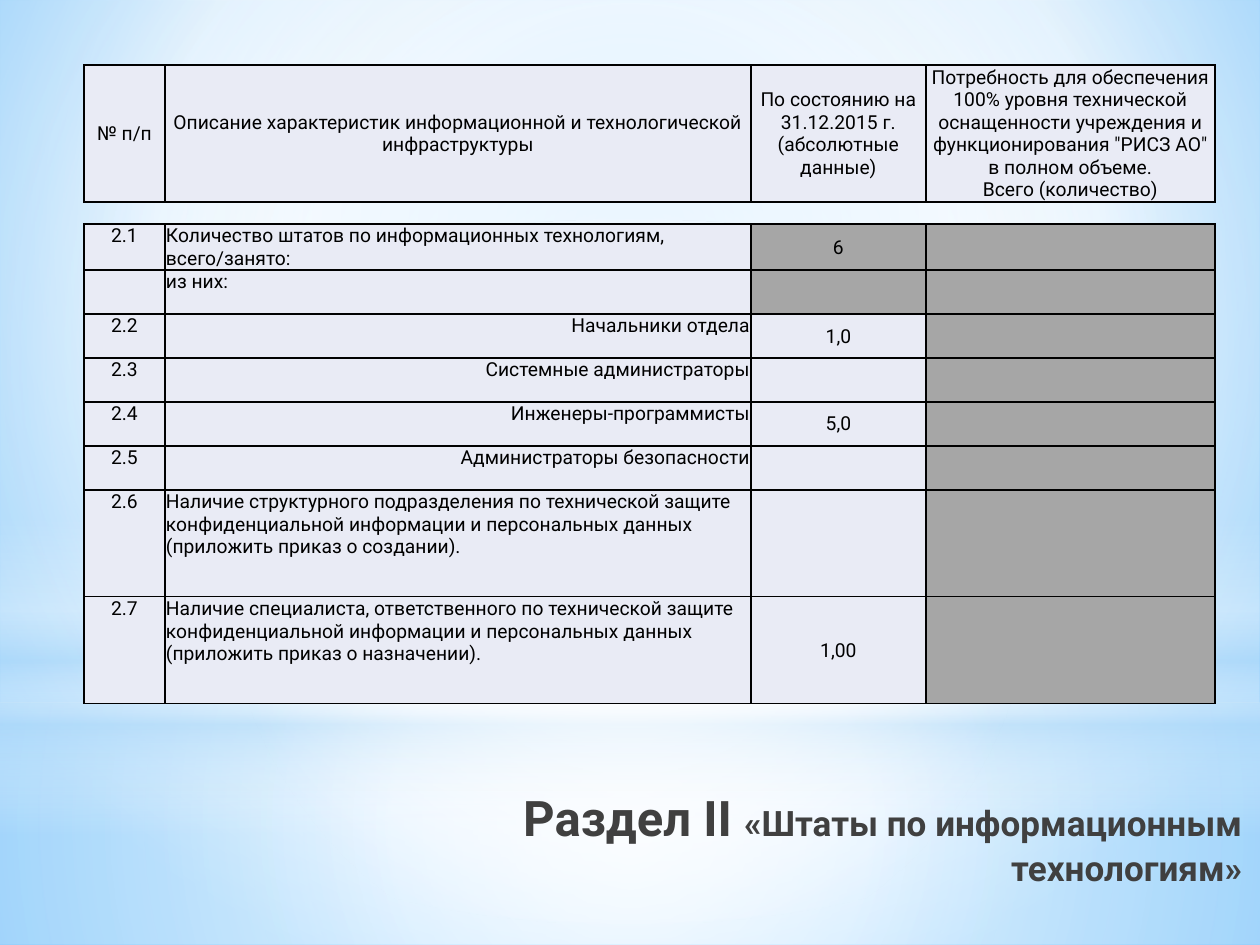
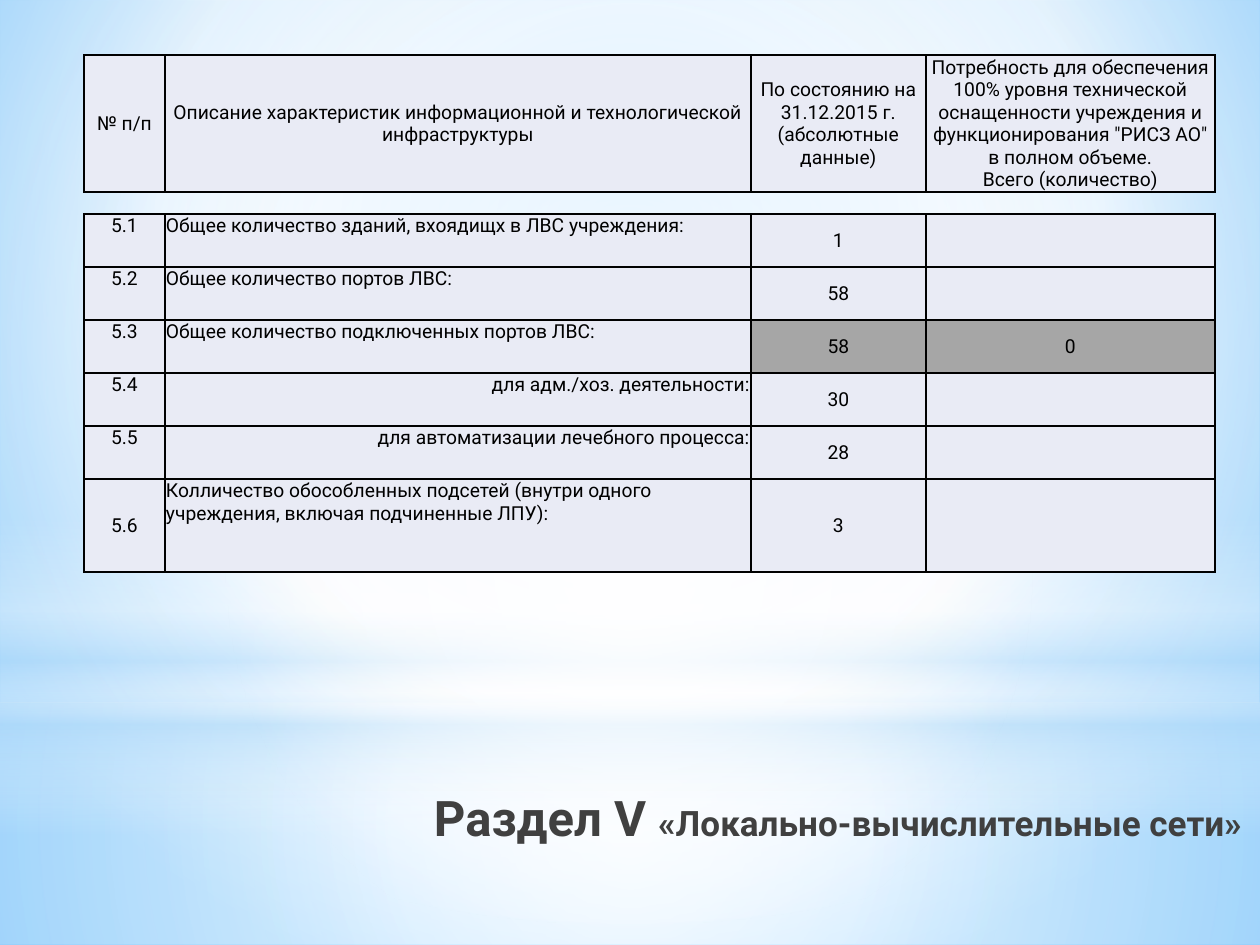
from dataclasses import dataclass

from lxml import etree
from pptx import Presentation
from pptx.dml.color import RGBColor
from pptx.enum.shapes import MSO_SHAPE
from pptx.enum.text import MSO_ANCHOR, MSO_AUTO_SIZE, PP_ALIGN
from pptx.oxml.ns import qn
from pptx.util import Emu, Pt

RECT, OVAL = MSO_SHAPE.RECTANGLE, MSO_SHAPE.OVAL
TOP, MIDDLE = MSO_ANCHOR.TOP, MSO_ANCHOR.MIDDLE
LEFT, CENTER, RIGHT = PP_ALIGN.LEFT, PP_ALIGN.CENTER, PP_ALIGN.RIGHT

EMU_PER_PX = 914400 / 126
SLIDE_W, SLIDE_H = 1260, 945
TITLE_BOX = (358, 781, 897, 157)
TABLE_LEFT = 84
COLUMN_WIDTHS = (81, 586, 175, 289)
HEADER_H = 137
HEADER_TO_BODY = 159

FONT = "Roboto"
CELL_SIZE = 11
BLACK = RGBColor(0x00, 0x00, 0x00)
WHITE = RGBColor(0xFF, 0xFF, 0xFF)
TITLE_GREY = RGBColor(0x40, 0x40, 0x40)
CELL_PALE = RGBColor(0xE9, 0xEB, 0xF5)
CELL_GREY = RGBColor(0xA6, 0xA6, 0xA6)
SKY = RGBColor(0xB4, 0xDC, 0xFA)
SKY_MID = RGBColor(0x9E, 0xD5, 0xFF)
SKY_DEEP = RGBColor(0x5B, 0xB9, 0xFF)

HEADERS = (
    "№ п/п",
    "Описание характеристик информационной и технологической инфраструктуры",
    "По состоянию на 31.12.2015 г. (абсолютные данные)",
    "Потребность для обеспечения 100% уровня технической оснащенности учреждения "
    "и функционирования \"РИСЗ АО\" в полном объеме.\vВсего (количество)",
)


@dataclass(frozen=True)
class Stop:
    position: int
    color: RGBColor
    opacity: int = 100


@dataclass(frozen=True)
class Glow:
    """A gradient shape of the backdrop; without a focus the gradient runs downwards."""
    shape: int
    box: tuple[int, int, int, int]
    stops: tuple[Stop, ...]
    focus: tuple[int, int, int, int] | None = (50, 50, 50, 50)


@dataclass(frozen=True)
class Row:
    number: str
    text: str
    state: str = ""
    need: str = ""
    height: int = 44
    align: int = LEFT
    state_fill: RGBColor = CELL_PALE
    need_fill: RGBColor = CELL_PALE
    number_anchor: int = TOP


@dataclass(frozen=True)
class Section:
    name: str
    topic: str
    top: int
    rows: tuple[Row, ...]


SKY_STOPS = (Stop(0, SKY_MID), Stop(60, WHITE), Stop(100, SKY_DEEP))
SKY_FOCUS = (20, 10, 20, 60)
GLOWS = (
    Glow(RECT, (0, 703, SLIDE_W, 242),
         (Stop(0, WHITE, 91), Stop(37, WHITE, 76), Stop(100, SKY, 79))),
    Glow(RECT, (0, 0, SLIDE_W, 703),
         (Stop(0, WHITE, 89), Stop(48, WHITE, 62), Stop(100, SKY, 79))),
    Glow(RECT, (0, 519, SLIDE_W, 315),
         (Stop(0, WHITE, 0), Stop(29, WHITE, 30), Stop(45, SKY, 40),
          Stop(55, WHITE, 26), Stop(65, SKY, 60), Stop(100, WHITE, 0)), None),
    Glow(OVAL, (0, 220, SLIDE_W, 703), (Stop(0, WHITE), Stop(56, WHITE, 0))),
)

SECTIONS = (
    Section("Раздел II ", "«Штаты по информационным технологиям»", 65, (
        Row("2.1", "Количество штатов по информационных технологиям, всего/занято:",
            "6", height=46, state_fill=CELL_GREY, need_fill=CELL_GREY),
        Row("", "из них:", state_fill=CELL_GREY, need_fill=CELL_GREY),
        Row("2.2", "Начальники отдела", "1,0", align=RIGHT, need_fill=CELL_GREY),
        Row("2.3", "Системные администраторы", align=RIGHT, need_fill=CELL_GREY),
        Row("2.4", "Инженеры-программисты", "5,0", align=RIGHT, need_fill=CELL_GREY),
        Row("2.5", "Администраторы безопасности", align=RIGHT, need_fill=CELL_GREY),
        Row("2.6", "Наличие структурного подразделения по технической защите "
            "конфиденциальной информации и персональных данных "
            "(приложить приказ о создании).", height=107, need_fill=CELL_GREY),
        Row("2.7", "Наличие специалиста, ответственного по технической защите "
            "конфиденциальной информации и персональных данных "
            "(приложить приказ о назначении).", "1,00", height=107, need_fill=CELL_GREY),
    )),
    Section("Раздел V ", "«Локально-вычислительные сети»", 55, (
        Row("5.1", "Общее количество зданий, вхоядищх в ЛВС учреждения:", "1", height=53),
        Row("5.2", "Общее количество портов ЛВС:", "58", height=53),
        Row("5.3", "Общее количество подключенных портов ЛВС:", "58", "0", height=53,
            state_fill=CELL_GREY, need_fill=CELL_GREY),
        Row("5.4", "для адм./хоз. деятельности:", "30", height=53, align=RIGHT),
        Row("5.5", "для автоматизации лечебного процесса:", "28", height=53, align=RIGHT),
        Row("5.6", "Колличество обособленных подсетей (внутри одного учреждения, "
            "включая подчиненные ЛПУ):", "3", height=93, number_anchor=MIDDLE),
    )),
)


def px(value: int) -> Emu:
    return Emu(round(value * EMU_PER_PX))


def set_gradient(element, stops, focus=None) -> None:
    """Replace the plain gradient inside element by one with opacity and focus."""
    old = next(element.iter(qn("a:gradFill")))
    grad = etree.Element(qn("a:gradFill"), rotWithShape="1")
    stop_list = etree.SubElement(grad, qn("a:gsLst"))
    for stop in stops:
        gs = etree.SubElement(stop_list, qn("a:gs"), pos=str(stop.position * 1000))
        color = etree.SubElement(gs, qn("a:srgbClr"), val=str(stop.color))
        if stop.opacity < 100:
            etree.SubElement(color, qn("a:alpha"), val=str(stop.opacity * 1000))
    if focus:
        path = etree.SubElement(grad, qn("a:path"), path="circle")
        sides = {side: str(v * 1000) for side, v in zip("ltrb", focus)}
        etree.SubElement(path, qn("a:fillToRect"), sides)
    else:
        etree.SubElement(grad, qn("a:lin"), ang="5400000", scaled="0")
    old.getparent().replace(old, grad)


def add_backdrop(layout, s) -> None:
    """Give the layout its sky; the glows are drawn on s and moved to the layout."""
    layout.background.fill.gradient()
    set_gradient(layout.background._cSld, SKY_STOPS, SKY_FOCUS)
    for i, glow in enumerate(GLOWS):
        sp = s.shapes.add_shape(glow.shape, *map(px, glow.box))
        sp.shadow.inherit = False
        sp.line.fill.background()
        sp.fill.gradient()
        set_gradient(sp._element, glow.stops, glow.focus)
        sp._element.nvSpPr.cNvPr.set("id", str(100 + i))
        layout.shapes._spTree.insert(2 + i, sp._element)


def add_text(p, text: str, *, size: int, color: RGBColor = BLACK,
             bold: bool = False, align: int = LEFT) -> None:
    p.alignment = align
    for i, line in enumerate(text.split("\v")):
        if i:
            p.add_line_break()
        r = p.add_run()
        r.text = line
        r.font.name, r.font.size, r.font.bold = FONT, Pt(size), bold
        r.font.color.rgb = color


def add_title(s, section: Section) -> None:
    title = s.shapes.title
    title.left, title.top, title.width, title.height = map(px, TITLE_BOX)
    tf = title.text_frame
    tf.word_wrap = True
    tf.auto_size = MSO_AUTO_SIZE.NONE
    tf.vertical_anchor = TOP
    for text, size in ((section.name, 28), (section.topic, 20)):
        add_text(tf.paragraphs[0], text, size=size, color=TITLE_GREY,
                 bold=True, align=RIGHT)


def add_borders(cell) -> None:
    tc_pr = cell._tc.get_or_add_tcPr()
    for side in "LRTB":
        ln = etree.SubElement(tc_pr, qn(f"a:ln{side}"), w=str(Pt(1)))
        fill = etree.SubElement(ln, qn("a:solidFill"))
        etree.SubElement(fill, qn("a:srgbClr"), val=str(BLACK))


def fill_cell(cell, text: str, *, fill: RGBColor = CELL_PALE,
              align: int = CENTER, anchor: int = MIDDLE) -> None:
    cell.margin_left = cell.margin_right = cell.margin_top = px(1)
    cell.margin_bottom = 0
    cell.vertical_anchor = anchor
    add_borders(cell)
    cell.fill.solid()
    cell.fill.fore_color.rgb = fill
    p = cell.text_frame.paragraphs[0]
    if text:
        add_text(p, text, size=CELL_SIZE, align=align)
    else:
        etree.SubElement(p._p, qn("a:endParaRPr"), sz=str(CELL_SIZE * 100))


def add_grid(s, top: int, heights: list[int]):
    """Add an unstyled table with the shared columns."""
    frame = s.shapes.add_table(len(heights), len(COLUMN_WIDTHS), px(TABLE_LEFT), px(top),
                               px(sum(COLUMN_WIDTHS)), px(sum(heights)))
    table = frame.table
    table.first_row = table.horz_banding = False
    for column, width in zip(table.columns, COLUMN_WIDTHS):
        column.width = px(width)
    for row, height in zip(table.rows, heights):
        row.height = px(height)
    return table


def add_section(s, section: Section) -> None:
    add_title(s, section)
    body = add_grid(s, section.top + HEADER_TO_BODY, [row.height for row in section.rows])
    for cells, row in zip(body.rows, section.rows):
        number, text, state, need = cells.cells
        fill_cell(number, row.number, anchor=row.number_anchor)
        fill_cell(text, row.text, align=row.align, anchor=TOP)
        fill_cell(state, row.state, fill=row.state_fill)
        fill_cell(need, row.need, fill=row.need_fill)
    header = add_grid(s, section.top, [HEADER_H])
    for cell, text in zip(header.rows[0].cells, HEADERS):
        fill_cell(cell, text)


def main() -> None:
    prs = Presentation()
    prs.slide_width, prs.slide_height = px(SLIDE_W), px(SLIDE_H)
    layout = prs.slide_layouts.get_by_name("Title Only")
    slides = [prs.slides.add_slide(layout) for _ in SECTIONS]
    add_backdrop(layout, slides[0])
    for s, section in zip(slides, SECTIONS):
        add_section(s, section)
    prs.save("out.pptx")


if __name__ == "__main__":
    main()
